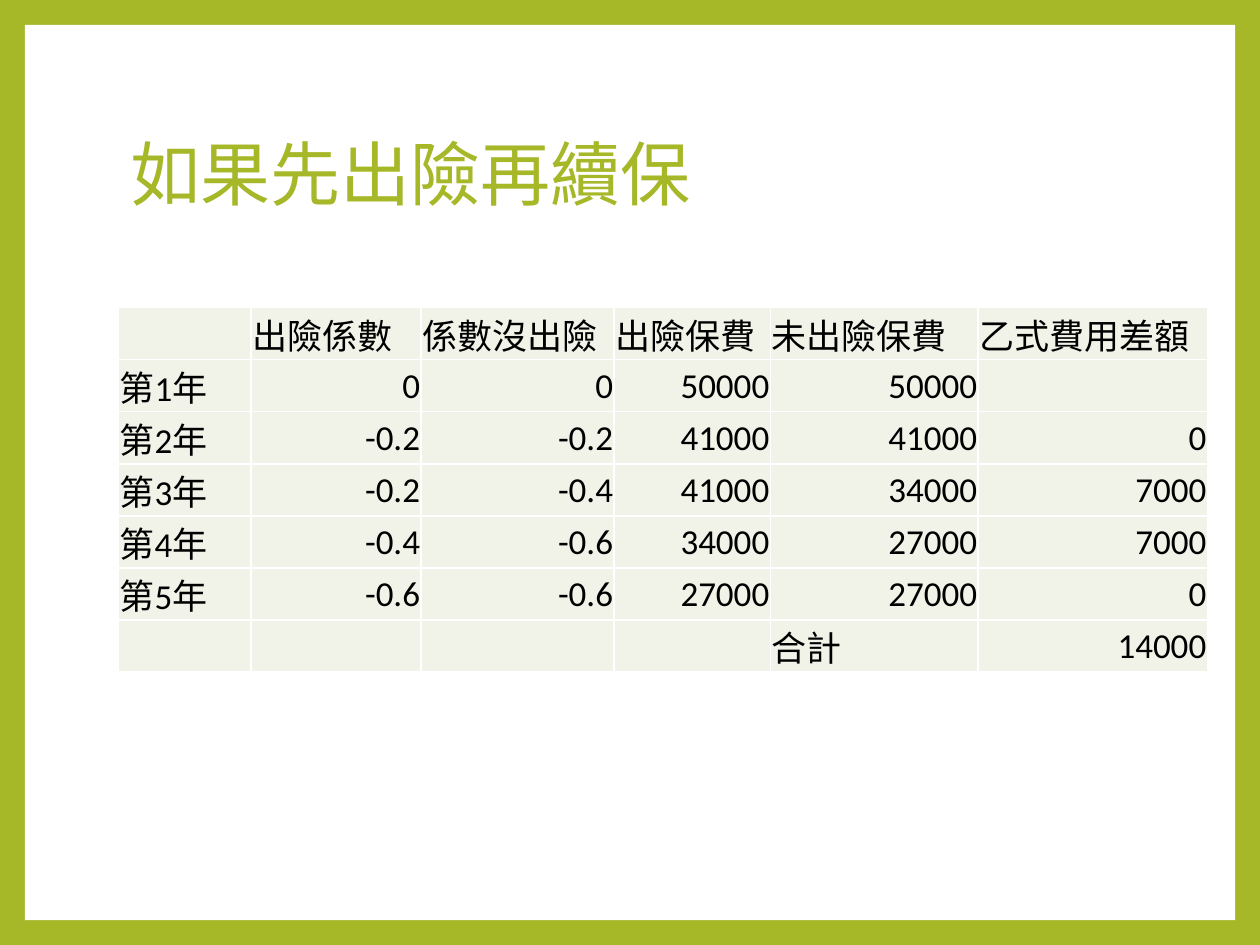
import pptx
import pptx.util
import pptx.dml.color
import pptx.enum.shapes
import pptx.enum.text
import pptx.oxml.ns
import lxml.etree

Cm = pptx.util.Cm
Pt = pptx.util.Pt
ALIGN = pptx.enum.text.PP_ALIGN
ANCHOR = pptx.enum.text.MSO_ANCHOR
qn = pptx.oxml.ns.qn

GREEN, WHITE, BLACK, CELL = "A6B727", "FFFFFF", "000000", "F1F3E8"
COLUMN_WIDTHS = [2.67, 3.43, 3.89, 3.15, 4.19, 4.62]
ROW_HEIGHT = 1.05
PREMIUMS = [
    ["", "出險係數", "係數沒出險", "出險保費", "未出險保費", "乙式費用差額"],
    ["第1年", "0", "0", "50000", "50000", ""],
    ["第2年", "-0.2", "-0.2", "41000", "41000", "0"],
    ["第3年", "-0.2", "-0.4", "41000", "34000", "7000"],
    ["第4年", "-0.4", "-0.6", "34000", "27000", "7000"],
    ["第5年", "-0.6", "-0.6", "27000", "27000", "0"],
    ["", "", "", "", "合計", "14000"],
]


def set_fill(fill, color):
    fill.solid()
    fill.fore_color.rgb = pptx.dml.color.RGBColor.from_string(color)


def write_text(tf, text, size=20, color=BLACK, align=ALIGN.LEFT, spacing=1.0):
    p = tf.paragraphs[0]
    p.alignment = align
    p.line_spacing = spacing
    r = p.add_run()
    r.text = text
    r.font.name = "Calibri"
    r.font.size = Pt(size)
    set_fill(r.font.fill, color)


def add_panel(s):
    sp = s.shapes.add_shape(pptx.enum.shapes.MSO_SHAPE.RECTANGLE,
                            Cm(0.5), Cm(0.5), Cm(24.4), Cm(18.05))
    sp.shadow.inherit = False
    sp.line.fill.background()
    set_fill(sp.fill, WHITE)


def add_title(s, text):
    sp = s.shapes.add_textbox(Cm(2.39), Cm(1.7), Cm(20.57), Cm(3.76))
    tf = sp.text_frame
    tf.word_wrap = True
    tf.vertical_anchor = ANCHOR.MIDDLE
    write_text(tf, text, size=40, color=GREEN, spacing=0.9)


def set_borders(cell, color, width):
    props = cell._tc.get_or_add_tcPr()
    for side in ("lnL", "lnR", "lnT", "lnB"):
        line = lxml.etree.SubElement(props, qn("a:" + side), w=str(Pt(width)))
        fill = lxml.etree.SubElement(line, qn("a:solidFill"))
        lxml.etree.SubElement(fill, qn("a:srgbClr"), val=color)


def fill_cell(cell, text):
    cell.margin_left = cell.margin_right = cell.margin_top = Cm(0.02)
    cell.margin_bottom = 0
    cell.vertical_anchor = ANCHOR.MIDDLE
    set_borders(cell, WHITE, 1)
    set_fill(cell.fill, CELL)
    if text:
        numeric = text[-1].isdigit()
        write_text(cell.text_frame, text,
                   align=ALIGN.RIGHT if numeric else ALIGN.LEFT)


def add_premium_table(s, rows):
    frame = s.shapes.add_table(len(rows), len(COLUMN_WIDTHS), Cm(2.39), Cm(6.2),
                               Cm(sum(COLUMN_WIDTHS)), Cm(ROW_HEIGHT * len(rows)))
    table = frame.table
    table.first_row = False
    table.horz_banding = False
    for column, width in zip(table.columns, COLUMN_WIDTHS):
        column.width = Cm(width)
    for i, row in enumerate(rows):
        table.rows[i].height = Cm(ROW_HEIGHT)
        for j, text in enumerate(row):
            fill_cell(table.cell(i, j), text)


def main():
    prs = pptx.Presentation()
    prs.slide_width, prs.slide_height = Cm(25.4), Cm(19.05)
    s = prs.slides.add_slide(prs.slide_layouts[6])
    set_fill(s.background.fill, GREEN)
    add_panel(s)
    add_title(s, "如果先出險再續保")
    add_premium_table(s, PREMIUMS)
    prs.save("out.pptx")


if __name__ == "__main__":
    main()
